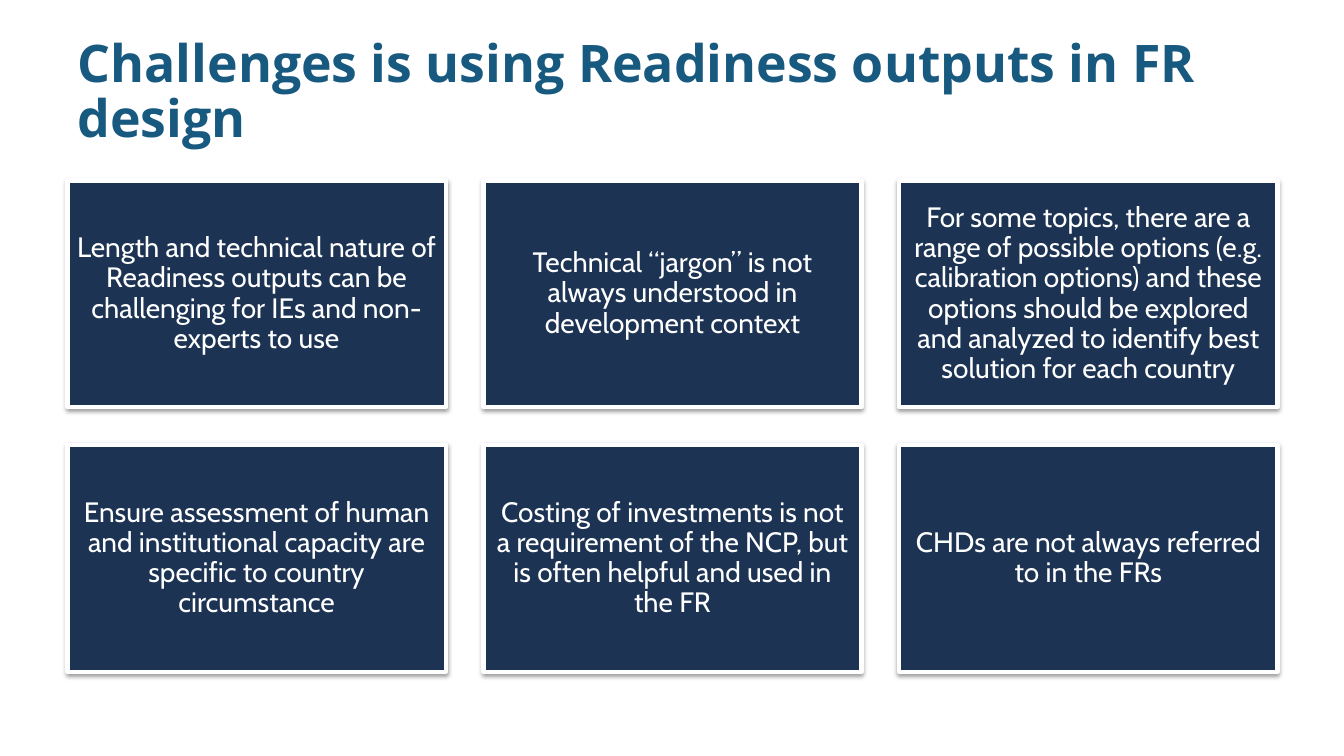
"""Build a slide with a title above a grid of six challenge cards."""
from dataclasses import dataclass

from lxml import etree
from pptx import Presentation
from pptx.dml.color import RGBColor
from pptx.enum.shapes import MSO_SHAPE
from pptx.enum.text import MSO_ANCHOR, MSO_AUTO_SIZE, PP_ALIGN
from pptx.oxml.ns import qn
from pptx.shapes.autoshape import Shape
from pptx.slide import Slide
from pptx.text.text import TextFrame
from pptx.util import Inches, Pt

RECT = MSO_SHAPE.RECTANGLE
MIDDLE = MSO_ANCHOR.MIDDLE
NO_FIT = MSO_AUTO_SIZE.NONE
LEFT, CENTER = PP_ALIGN.LEFT, PP_ALIGN.CENTER
TITLE_ONLY = 5


@dataclass(frozen=True)
class Style:
    font: str
    size: float
    color: RGBColor
    bold: bool
    align: PP_ALIGN


@dataclass(frozen=True)
class Theme:
    navy: RGBColor = RGBColor.from_string("1C3353")
    white: RGBColor = RGBColor.from_string("FFFFFF")
    shade: str = "000000"
    title: Style = Style("Open Sans", 37, RGBColor.from_string("185980"), True, LEFT)
    body: Style = Style("Cabin", 20, RGBColor.from_string("FFFFFF"), False, CENTER)


@dataclass(frozen=True)
class Grid:
    left: float = 0.67
    top: float = 1.79
    width: float = 3.75
    height: float = 2.25
    gap: float = 0.375
    cols: int = 3


@dataclass(frozen=True)
class Card:
    text: str
    col: int
    row: int


THEME = Theme()
GRID = Grid()
TITLE = "Challenges is using Readiness outputs in FR design"
TOPICS = (
    "Length and technical nature of Readiness outputs can be challenging "
    "for IEs and non-experts to use",
    "Technical “jargon” is not always understood in development context",
    "For some topics, there are a range of possible options (e.g. calibration "
    "options) and these options should be explored and analyzed to identify "
    "best solution for each country",
    "Ensure assessment of human and institutional capacity are specific to "
    "country circumstance",
    "Costing of investments is not a requirement of the NCP, but is often "
    "helpful and used in the FR",
    "CHDs are not always referred to in the FRs",
)
CARDS = [Card(text, i % GRID.cols, i // GRID.cols) for i, text in enumerate(TOPICS)]


def write(frame: TextFrame, text: str, style: Style) -> None:
    frame.word_wrap = True
    frame.auto_size = NO_FIT
    frame.vertical_anchor = MIDDLE
    para = frame.paragraphs[0]
    para.alignment = style.align
    para.line_spacing = 0.9
    para.space_before = Pt(0)
    run = para.add_run()
    run.text = text
    run.font.name = style.font
    run.font.size = Pt(style.size)
    run.font.bold = style.bold
    run.font.color.rgb = style.color


def add_shade(shape: Shape) -> None:
    shape.shadow.inherit = False
    effects = shape.element.spPr.find(qn("a:effectLst"))
    outer = etree.SubElement(effects, qn("a:outerShdw"), {
        "blurRad": str(Pt(3.1)), "dist": str(Pt(1.6)),
        "dir": "5400000", "rotWithShape": "0",
    })
    color = etree.SubElement(outer, qn("a:srgbClr"), val=THEME.shade)
    etree.SubElement(color, qn("a:alpha"), val="38000")


def add_title(slide: Slide) -> None:
    title = slide.shapes.title
    title.left, title.top = Inches(GRID.left), Inches(0.3)
    title.width, title.height = Inches(12), Inches(1.25)
    write(title.text_frame, TITLE, THEME.title)


def add_card(slide: Slide, card: Card) -> None:
    left = GRID.left + card.col * (GRID.width + GRID.gap)
    top = GRID.top + card.row * (GRID.height + GRID.gap)
    shape = slide.shapes.add_shape(
        RECT, Inches(left), Inches(top), Inches(GRID.width), Inches(GRID.height))
    shape.fill.solid()
    shape.fill.fore_color.rgb = THEME.navy
    shape.line.color.rgb = THEME.white
    shape.line.width = Pt(3)
    add_shade(shape)
    frame = shape.text_frame
    frame.margin_left = frame.margin_right = Inches(0.08)
    frame.margin_top = frame.margin_bottom = Inches(0.08)
    write(frame, card.text, THEME.body)


def main() -> None:
    deck = Presentation()
    deck.slide_width, deck.slide_height = Inches(13.33), Inches(7.5)
    slide = deck.slides.add_slide(deck.slide_layouts[TITLE_ONLY])
    add_title(slide)
    for card in CARDS:
        add_card(slide, card)
    deck.save("out.pptx")


if __name__ == "__main__":
    main()
